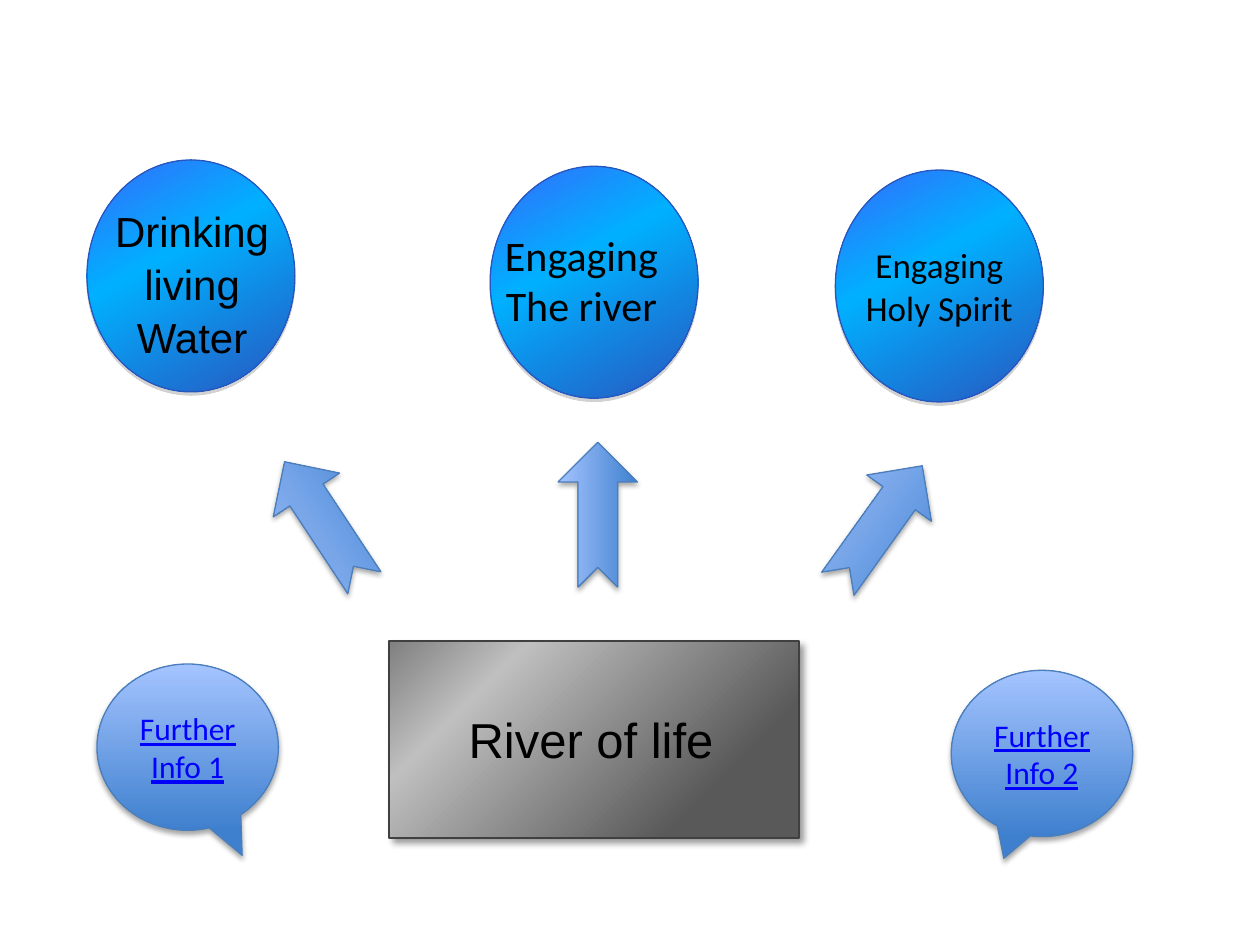
from pptx import Presentation
from pptx.dml.color import RGBColor
from pptx.enum.shapes import MSO_SHAPE
from pptx.enum.text import MSO_ANCHOR, MSO_AUTO_SIZE, PP_ALIGN
from pptx.oxml import parse_xml
from pptx.oxml.ns import nsdecls
from pptx.util import Inches, Pt

STONE = dict(
    stops=[(22, "595959"), (77, "BFBFBF"), (100, "808080")], angle=225,
    line=("404040", 1), shadow=("000000", 40, 4, 3, 45))
WATER = dict(
    stops=[(0, "336FFA"), (2, "336FFA"), (40, "00B0FF"), (100, "2856BF")], angle=61,
    line=("2856BF", 0.75), shadow=("808080", 35, 0, 1.8, 90))
SKY = dict(
    stops=[(0, "3F80CE"), (100, "A4C4FF")], angle=270,
    line=("4B7EBC", 0.75), shadow=("000000", 35, 3.1, 1.8, 90))

RIVER = (3.09, 5.09, 3.25, 1.56)
CIRCLES = [(0.69, 1.27), (3.89, 1.32), (6.63, 1.35)]
CIRCLE_SIZE = (1.65, 1.84)
SPIRIT_TEXT = "Engaging\nHoly Spirit "
LABELS = [
    ("River of life", (3.1, 5.63, 3.18, 0.47), 28, "Arial", 1),
    ("Engaging\nThe river", (3.7, 1.82, 1.83, 0.81), 24, "Calibri", 1),
    ("Drinking\nliving\nWater", (0.61, 1.61, 1.83, 1.21), 24, "Arial", 1.05),
]
CALLOUTS = [
    ("Further Info 2", (7.55, 5.32), (-0.21, 0.63)),
    ("Further Info 1", (0.77, 5.27), (0.3, 0.65)),
]
CALLOUT_SIZE = (1.44, 1.32)
ARROWS = [((4.17, 3.77), 270), ((2, 3.83), 236.6), ((6.41, 3.85), 305.6)]
ARROW_SIZE = (1.15, 0.63)


def rgb(value):
    return RGBColor.from_string(value)


def add_styled(slide, preset, box, look):
    shape = slide.shapes.add_shape(preset, *map(Inches, box))
    stops = "".join(
        f'<a:gs pos="{position * 1000}"><a:srgbClr val="{color}"/></a:gs>'
        for position, color in look["stops"])
    shape.element.spPr.insert(2, parse_xml(
        f'<a:gradFill {nsdecls("a")} rotWithShape="1"><a:gsLst>{stops}</a:gsLst>'
        f'<a:lin ang="{look["angle"] * 60000}" scaled="0"/></a:gradFill>'))
    line_color, width = look["line"]
    shape.line.color.rgb = rgb(line_color)
    shape.line.width = Pt(width)
    shape.shadow.inherit = False
    color, alpha, blur, distance, direction = look["shadow"]
    shape.element.spPr.find(
        "{http://schemas.openxmlformats.org/drawingml/2006/main}effectLst"
    ).append(parse_xml(
        f'<a:outerShdw {nsdecls("a")} blurRad="{Pt(blur)}" dist="{Pt(distance)}" '
        f'dir="{direction * 60000}" rotWithShape="0"><a:srgbClr val="{color}">'
        f'<a:alpha val="{alpha * 1000}"/></a:srgbClr></a:outerShdw>'))
    return shape


def write(shape, text, size, font, color="000000", underline=None, spacing=1):
    frame = shape.text_frame
    frame.word_wrap = True
    paragraph = frame.paragraphs[0]
    paragraph.alignment = PP_ALIGN.CENTER
    paragraph.line_spacing = spacing
    for index, words in enumerate(text.split("\n")):
        if index:
            paragraph.add_line_break()
        run = paragraph.add_run()
        run.text = words
        run.font.size = Pt(size)
        run.font.name = font
        run.font.color.rgb = rgb(color)
        run.font.underline = underline
    return frame


def clear_margins(frame):
    frame.margin_left = frame.margin_top = frame.margin_right = frame.margin_bottom = 0


def main():
    deck = Presentation()
    deck.slide_width, deck.slide_height = Inches(10), Inches(7.5)
    slide = deck.slides.add_slide(deck.slide_layouts[6])

    add_styled(slide, MSO_SHAPE.RECTANGLE, RIVER, STONE)
    circles = [add_styled(slide, MSO_SHAPE.OVAL, corner + CIRCLE_SIZE, WATER)
               for corner in CIRCLES]
    spirit = write(circles[-1], SPIRIT_TEXT, 20, "Calibri")
    spirit.vertical_anchor = MSO_ANCHOR.MIDDLE
    clear_margins(spirit)

    for text, box, size, font, spacing in LABELS:
        label = slide.shapes.add_textbox(*map(Inches, box))
        frame = write(label, text, size, font, spacing=spacing)
        clear_margins(frame)
        frame.auto_size = MSO_AUTO_SIZE.SHAPE_TO_FIT_TEXT

    for text, corner, tail in CALLOUTS:
        callout = add_styled(slide, MSO_SHAPE.OVAL_CALLOUT, corner + CALLOUT_SIZE, SKY)
        callout.adjustments[0], callout.adjustments[1] = tail
        frame = write(callout, text, 18, "Calibri", "0000FF", True)
        frame.vertical_anchor = MSO_ANCHOR.MIDDLE

    for corner, rotation in ARROWS:
        arrow = add_styled(slide, MSO_SHAPE.NOTCHED_RIGHT_ARROW, corner + ARROW_SIZE, SKY)
        arrow.rotation = rotation

    deck.save("out.pptx")


if __name__ == "__main__":
    main()
